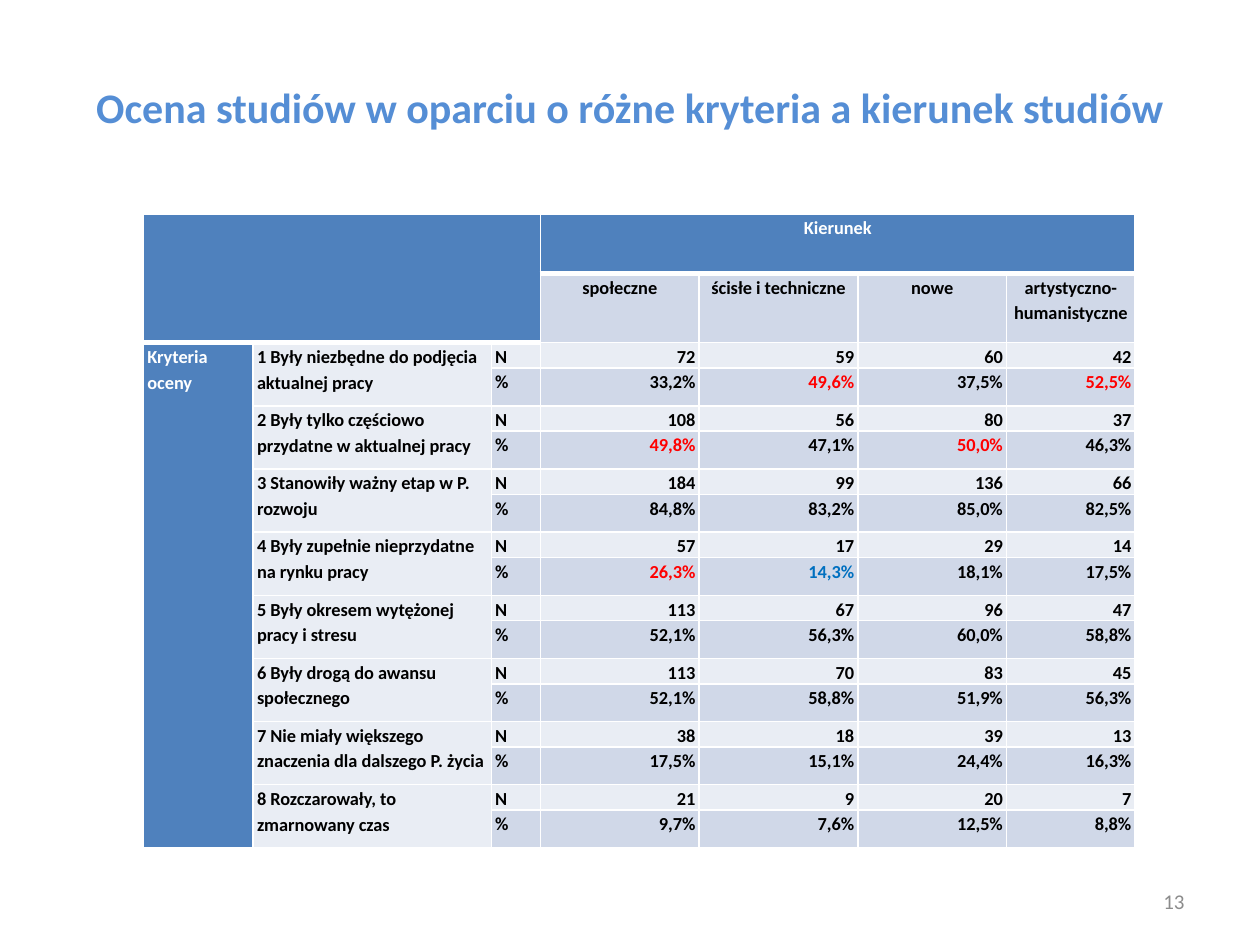
from lxml import etree
from pptx import Presentation
from pptx import util as u
from pptx.dml.color import RGBColor
from pptx.enum import text
from pptx.oxml import ns

HEADER, LIGHT, BAND, WHITE, BLACK = "4F81BD", "E9EDF4", "D0D8E8", "FFFFFF", "000000"
LEFT, CENTER, RIGHT = text.PP_ALIGN.LEFT, text.PP_ALIGN.CENTER, text.PP_ALIGN.RIGHT

FIELDS = ["społeczne", "ścisłe i techniczne", "nowe", "artystyczno-humanistyczne"]
CRITERIA = [
    ("1 Były niezbędne do podjęcia aktualnej pracy", "72 59 60 42", "33,2% 49,6% 37,5% 52,5%"),
    ("2 Były tylko częściowo przydatne w aktualnej pracy", "108 56 80 37", "49,8% 47,1% 50,0% 46,3%"),
    ("3 Stanowiły ważny etap w P. rozwoju", "184 99 136 66", "84,8% 83,2% 85,0% 82,5%"),
    ("4 Były zupełnie nieprzydatne na rynku pracy", "57 17 29 14", "26,3% 14,3% 18,1% 17,5%"),
    ("5 Były okresem wytężonej pracy i stresu", "113 67 96 47", "52,1% 56,3% 60,0% 58,8%"),
    ("6 Były drogą do awansu społecznego", "113 70 83 45", "52,1% 58,8% 51,9% 56,3%"),
    ("7 Nie miały większego znaczenia dla dalszego P. życia", "38 18 39 13", "17,5% 15,1% 24,4% 16,3%"),
    ("8 Rozczarowały, to zmarnowany czas", "21 9 20 7", "9,7% 7,6% 12,5% 8,8%"),
]
HIGHLIGHTS = {
    **dict.fromkeys(["49,6%", "52,5%", "49,8%", "50,0%", "26,3%"], "FF0000"),
    "14,3%": "0070C0",
}
COLUMN_WIDTHS = [0.87, 1.89, 0.39, 1.26, 1.26, 1.18, 1.02]
ROW_HEIGHTS = [0.47, 0.55] + [0.2, 0.3] * len(CRITERIA)


def color(value):
    return RGBColor.from_string(value)


def assign(target, values):
    for name, value in values.items():
        setattr(target, name, value)


class SlideBuilder:
    font = "Calibri"

    def __init__(self, slide):
        self.slide = slide

    def add_words(self, frame, words, size, ink, align, bold=True, spacing=1.0):
        para = frame.paragraphs[0]
        assign(para, {"alignment": align, "line_spacing": spacing})
        span = para.add_run()
        span.text = words
        assign(span.font, {"name": self.font, "size": u.Pt(size), "bold": bold})
        span.font.color.rgb = color(ink)

    def label(self, place, words, size, ink, align, bold):
        box = self.slide.shapes.add_textbox(*map(u.Inches, place))
        assign(box.text_frame, {"word_wrap": True, "vertical_anchor": text.MSO_ANCHOR.MIDDLE})
        self.add_words(box.text_frame, words, size, ink, align, bold)

    def table(self, left, top, widths, heights):
        place = map(u.Inches, (left, top, sum(widths), sum(heights)))
        table = self.slide.shapes.add_table(len(heights), len(widths), *place).table
        assign(table, {"first_row": False, "horz_banding": False})
        for column, width in zip(table.columns, widths):
            column.width = u.Inches(width)
        for row, height in zip(table.rows, heights):
            row.height = u.Inches(height)
        return table

    def border(self, cell, widths):
        properties = cell._tc.get_or_add_tcPr()
        for side, points in widths.items():
            line = etree.SubElement(properties, ns.qn(f"a:ln{side}"), w=str(u.Pt(points)))
            fill = etree.SubElement(line, ns.qn("a:solidFill"))
            etree.SubElement(fill, ns.qn("a:srgbClr"), val=WHITE)

    def style_cell(self, cell, fill, below_header, header_end):
        sides = {"L": 1, "R": 1, "T": 3 if below_header else 1, "B": 3 if header_end else 1}
        self.border(cell, sides)
        cell.fill.solid()
        cell.fill.fore_color.rgb = color(fill)
        assign(cell, {
            "margin_left": u.Inches(0.03), "margin_right": u.Inches(0.03),
            "margin_top": 0, "margin_bottom": 0,
        })

    def cell_text(self, cell, words, align=LEFT, ink=BLACK):
        self.add_words(cell.text_frame, words, 10.5, ink, align, spacing=1.15)


def fill_for(row, column):
    if row == 0 or column == 0 or (row == 1 and column < 3):
        return HEADER
    return LIGHT if column == 1 or row % 2 == 0 else BAND


def add_results(builder):
    table = builder.table(1.14, 1.7, COLUMN_WIDTHS, ROW_HEIGHTS)
    for row in range(len(ROW_HEIGHTS)):
        for column in range(len(COLUMN_WIDTHS)):
            last_header_row = 1 if column < 3 else 0
            builder.style_cell(
                table.cell(row, column),
                fill_for(row, column),
                below_header=row == last_header_row + 1,
                header_end=row == last_header_row or (row, column) == (0, 0),
            )
    table.cell(0, 0).merge(table.cell(1, 2))
    table.cell(0, 3).merge(table.cell(0, 6))
    table.cell(2, 0).merge(table.cell(len(ROW_HEIGHTS) - 1, 0))

    builder.cell_text(table.cell(0, 3), "Kierunek", CENTER, WHITE)
    builder.cell_text(table.cell(2, 0), "Kryteria oceny", ink=WHITE)
    for column, field in enumerate(FIELDS, 3):
        builder.cell_text(table.cell(1, column), field, CENTER)

    for index, (criterion, counts, shares) in enumerate(CRITERIA):
        first = 2 + 2 * index
        table.cell(first, 1).merge(table.cell(first + 1, 1))
        builder.cell_text(table.cell(first, 1), criterion)
        for row, (unit, values) in enumerate([("N", counts), ("%", shares)], first):
            builder.cell_text(table.cell(row, 2), unit)
            for column, value in enumerate(values.split(), 3):
                ink = HIGHLIGHTS.get(value, BLACK)
                builder.cell_text(table.cell(row, column), value, RIGHT, ink)


def main():
    deck = Presentation()
    assign(deck, {"slide_width": u.Inches(10), "slide_height": u.Inches(7.5)})
    builder = SlideBuilder(deck.slides.add_slide(deck.slide_layouts[6]))
    title = "Ocena studiów w oparciu o różne kryteria a kierunek studiów"
    builder.label((0.5, 0.3, 9, 1.09), title, 24, "558ED5", CENTER, True)
    add_results(builder)
    builder.label((7.17, 6.95, 2.33, 0.4), "13", 12, "8C8C8C", RIGHT, False)
    deck.save("out.pptx")


if __name__ == "__main__":
    main()
